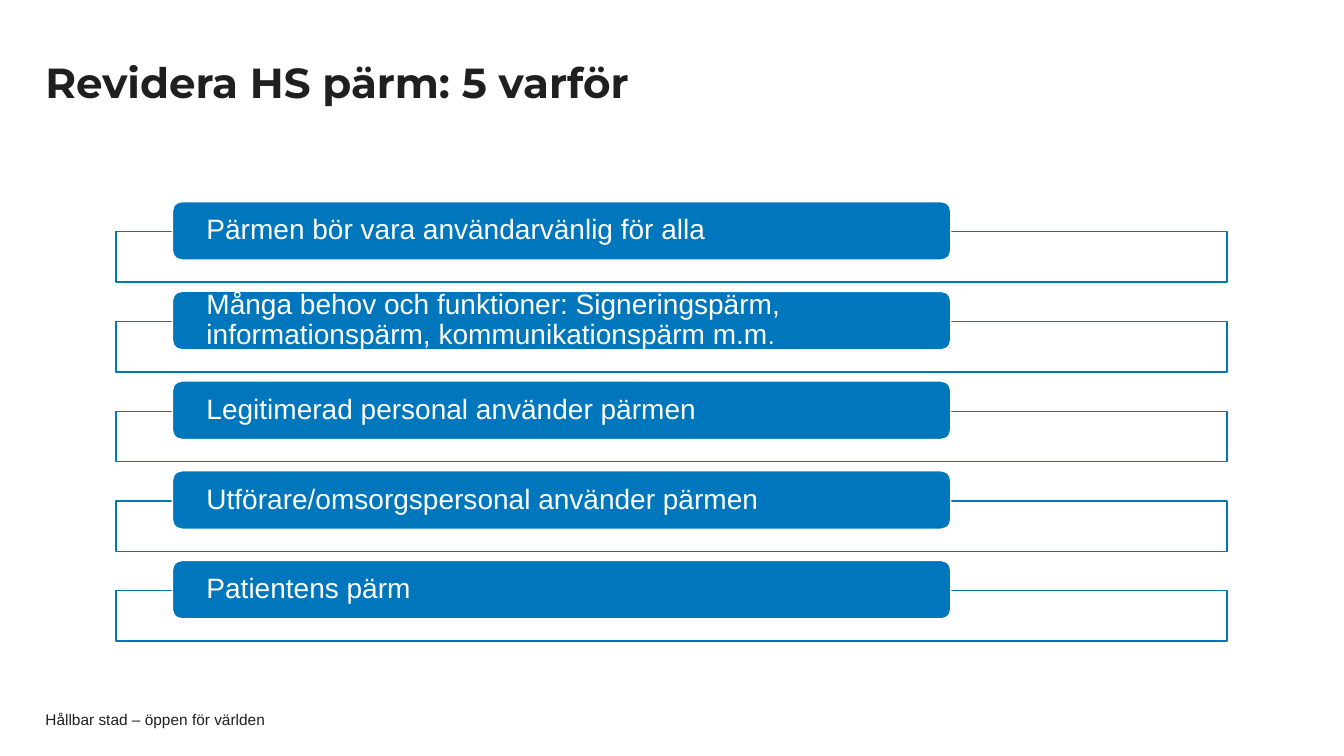
from pptx import Presentation
from pptx.dml.color import RGBColor
from pptx.enum.shapes import MSO_SHAPE as Shape
from pptx.enum.text import MSO_ANCHOR as Anchor, PP_ALIGN as Align
from pptx.util import Inches, Pt

REASONS = [
    ["Pärmen bör vara användarvänlig för alla"],
    ["Många behov och funktioner: Signeringspärm, "
     "informationspärm, kommunikationspärm m.m", "."],
    ["Legitimerad personal använder pärmen"],
    ["Utförare/omsorgspersonal använder pärmen"],
    ["Patientens pärm"],
]
FIRST_TOP = 2.0
ROW_PITCH = 0.89
FRAME_OFFSET = 0.3


def color(hex_string):
    return RGBColor.from_string(hex_string)


def write_text(frame, *texts, sizes, font, fill, bold=False, spacing=1.0, margins=(0, 0)):
    """Write one paragraph, one run per text; margins are horizontal and vertical inches."""
    frame.word_wrap = True
    frame.vertical_anchor = Anchor.MIDDLE
    frame.margin_left = frame.margin_right = Inches(margins[0])
    frame.margin_top = frame.margin_bottom = Inches(margins[1])
    paragraph = frame.paragraphs[0]
    paragraph.alignment = Align.LEFT
    paragraph.line_spacing = spacing
    for text, size in zip(texts, sizes):
        run = paragraph.add_run()
        run.text = text
        run.font.size = Pt(size)
        run.font.name = font
        run.font.bold = bold
        run.font.color.rgb = color(fill)


class ReasonSlide:
    BLUE = "0077BC"
    WHITE = "FFFFFF"
    INK = "1F1F1F"
    BODY_FONT = "Arial"
    TITLE_FONT = "Montserrat"

    def __init__(self, presentation):
        self.slide = presentation.slides.add_slide(presentation.slide_layouts[5])

    def title(self, text):
        title = self.slide.shapes.title
        title.left, title.top = Inches(0.45), Inches(0.44)
        title.width, title.height = Inches(10.03), Inches(0.81)
        write_text(title.text_frame, text, sizes=[30], font=self.TITLE_FONT,
                   fill=self.INK, bold=True, spacing=0.9, margins=(0, 0.05))

    def footer(self, text):
        box = self.slide.shapes.add_textbox(
            Inches(0.45), Inches(7.06), Inches(9.45), Inches(0.16))
        write_text(box.text_frame, text, sizes=[11], font=self.BODY_FONT, fill=self.INK)

    def box(self, kind, left, top, width, height, fill, line):
        shape = self.slide.shapes.add_shape(
            kind, Inches(left), Inches(top), Inches(width), Inches(height))
        shape.shadow.inherit = False
        shape.fill.solid()
        shape.fill.fore_color.rgb = color(fill)
        shape.line.color.rgb = color(line)
        shape.line.width = Pt(1)
        return shape

    def reason(self, top, texts):
        """Draw a wide frame with a labelled bar across its upper edge."""
        self.box(Shape.RECTANGLE, 1.15, top + FRAME_OFFSET, 11.02, 0.5,
                 self.WHITE, self.BLUE)
        bar = self.box(Shape.ROUNDED_RECTANGLE, 1.71, top, 7.72, 0.58,
                       self.BLUE, self.WHITE)
        write_text(bar.text_frame, *texts, sizes=[20, 18], font=self.BODY_FONT,
                   fill=self.WHITE, spacing=0.9, margins=(0.31, 0))


def main():
    presentation = Presentation()
    presentation.slide_width = Inches(13.33)
    presentation.slide_height = Inches(7.5)
    slide = ReasonSlide(presentation)
    slide.footer("Hållbar stad – öppen för världen")
    slide.title("Revidera HS pärm: 5 varför")
    for index, texts in enumerate(REASONS):
        slide.reason(FIRST_TOP + index * ROW_PITCH, texts)
    presentation.save("out.pptx")


if __name__ == "__main__":
    main()
